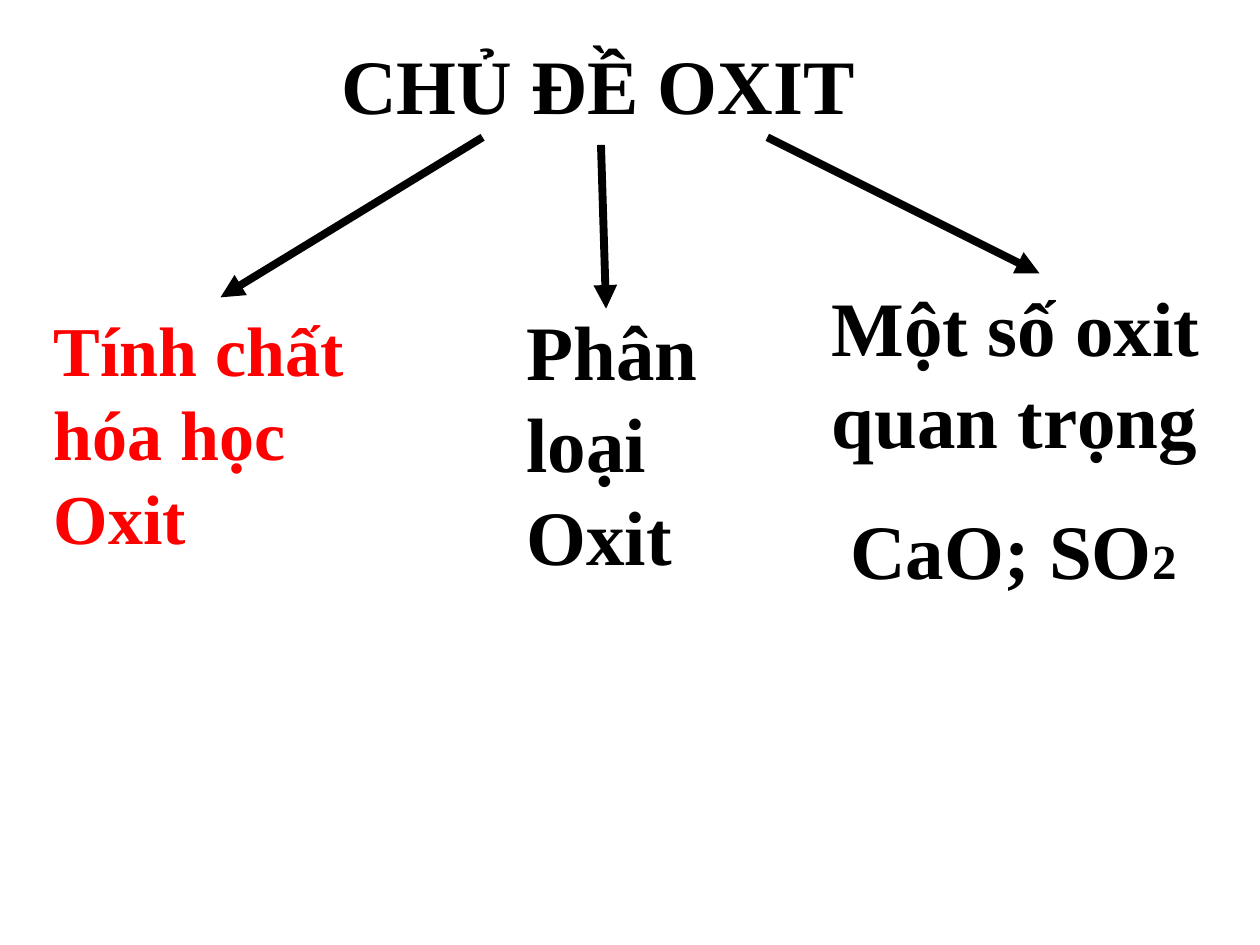
"""Build a slide that splits the oxide topic into three branches."""
from lxml.etree import SubElement
from pptx import Presentation
from pptx.dml.color import RGBColor
from pptx.enum.shapes import MSO_CONNECTOR
from pptx.enum.text import MSO_AUTO_SIZE
from pptx.oxml.ns import qn
from pptx.util import Inches, Pt

FONT = "Times New Roman"
BLACK, RED = "000000", "FF0000"
LINE_WIDTH = 4.5

# Each paragraph: indent in inches, space before in points, (text, size) spans.
TEXTS = [
    ((0.92, 0.25, 8.83, 0.84), BLACK, [(1.69, 0, [("CHỦ ĐỀ OXIT", 44)])]),
    ((0.33, 2.38, 2.58, 2.12), RED, [
        (0, 0, [("Tính chất hóa học", 40)]),
        (0, 0, [("Oxit", 40)]),
    ]),
    ((4.08, 2.36, 2.08, 2.32), BLACK, [(0, 0, [("Phân loại Oxit", 44)])]),
    ((6.5, 2.17, 3.25, 2.69), BLACK, [
        (0, 0, [("Một số oxit quan trọng", 44)]),
        (0.15, 22, [("CaO; SO", 44), ("2", 28)]),
    ]),
]
ARROWS = [
    (3.83, 1.09, 1.75, 2.36),
    (4.77, 1.15, 4.81, 2.45),
    (6.09, 1.09, 8.25, 2.17),
]


def color(value):
    return RGBColor.from_string(value)


def add_text(page, place, ink, paragraphs):
    box = page.shapes.add_textbox(*map(Inches, place))
    frame = box.text_frame
    frame.word_wrap = True
    frame.auto_size = MSO_AUTO_SIZE.SHAPE_TO_FIT_TEXT
    for index, (indent, before, spans) in enumerate(paragraphs):
        para = frame.add_paragraph() if index else frame.paragraphs[0]
        para.space_before = Pt(before)
        para._p.get_or_add_pPr().set("marL", str(Inches(indent)))
        for text, size in spans:
            span = para.add_run()
            span.text = text
            span.font.name = FONT
            span.font.size = Pt(size)
            span.font.bold = True
            span.font.color.rgb = color(ink)


def add_arrow(page, ends):
    arrow = page.shapes.add_connector(MSO_CONNECTOR.STRAIGHT, *map(Inches, ends))
    arrow.line.color.rgb = color(BLACK)
    arrow.line.width = Pt(LINE_WIDTH)
    SubElement(arrow.line._get_or_add_ln(), qn("a:tailEnd"), type="triangle")
    SubElement(arrow._element.spPr, qn("a:effectLst"))


def main():
    deck = Presentation()
    deck.slide_width, deck.slide_height = Inches(10), Inches(7.5)
    page = deck.slides.add_slide(deck.slide_layouts[6])
    for place, ink, paragraphs in TEXTS:
        add_text(page, place, ink, paragraphs)
    for ends in ARROWS:
        add_arrow(page, ends)
    deck.save("out.pptx")


if __name__ == "__main__":
    main()
